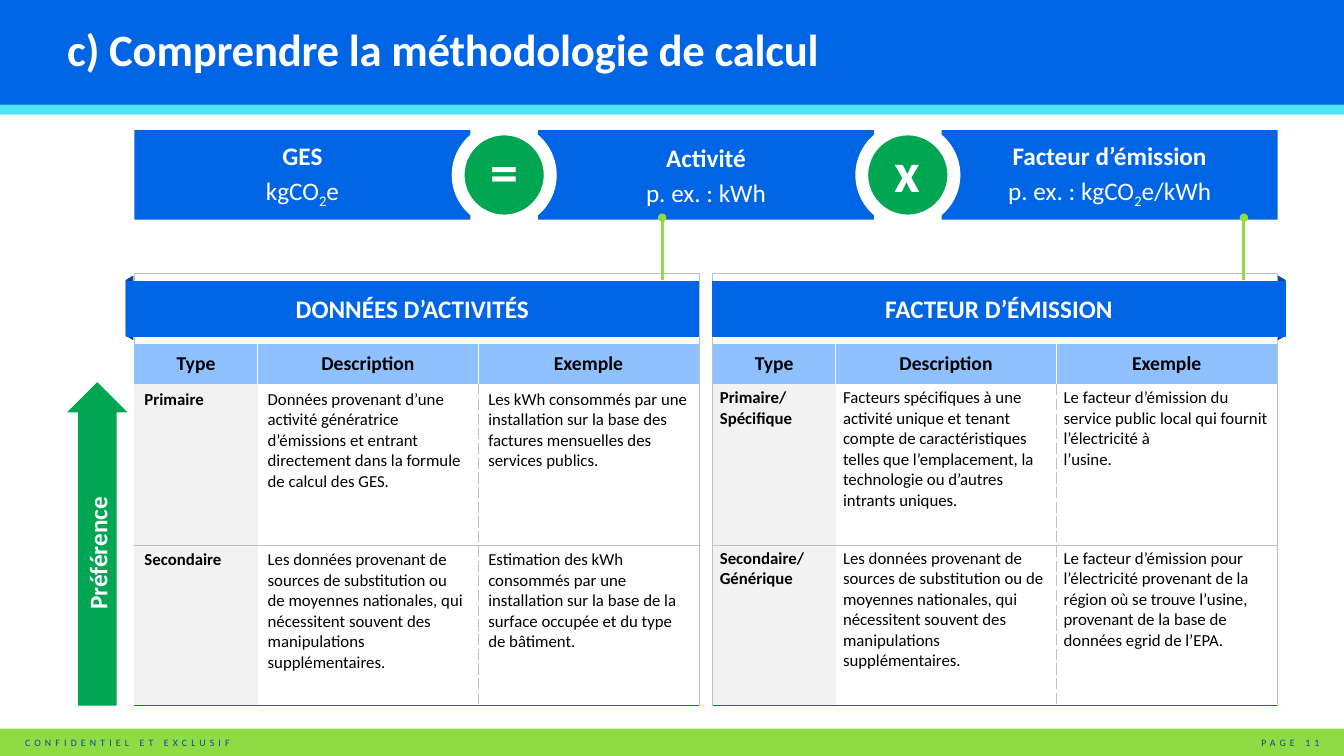
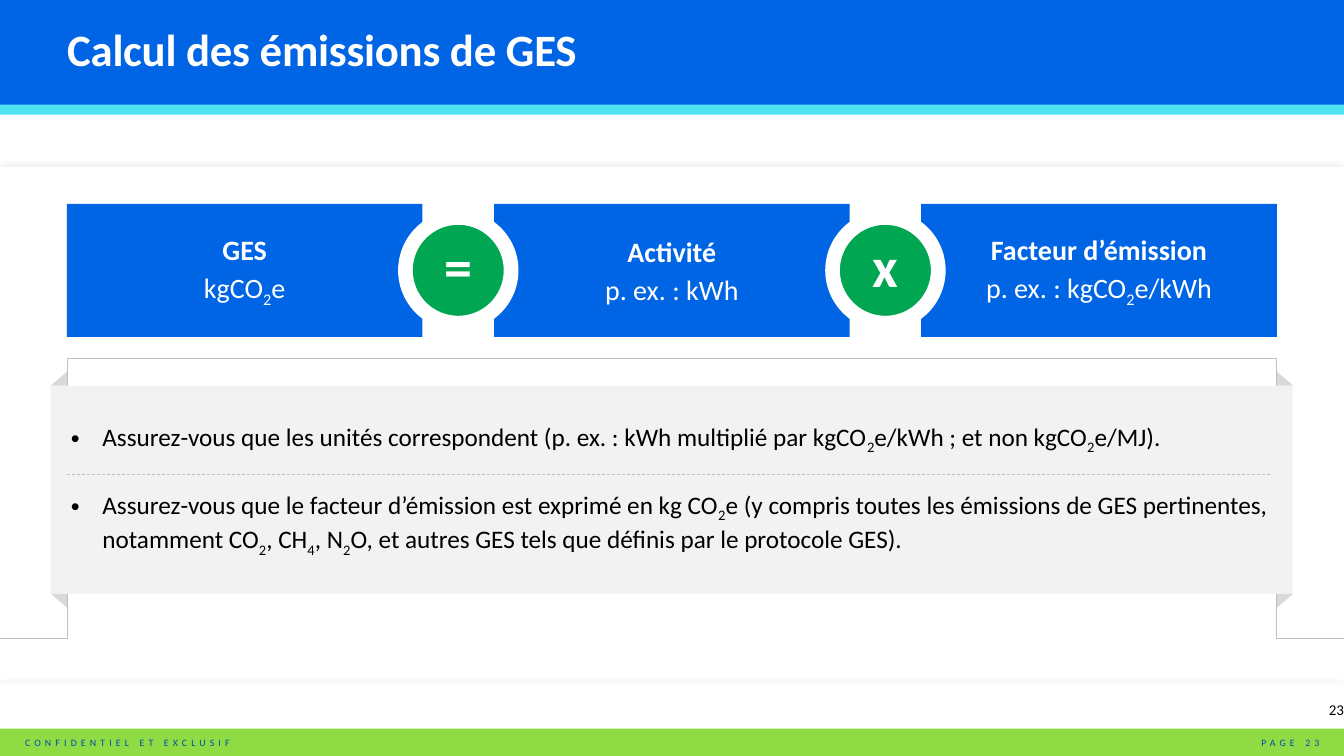
import pptx
import pptx.util
import pptx.dml.color
import pptx.enum.dml
import pptx.enum.shapes
import pptx.enum.text
import pptx.oxml
import pptx.oxml.ns
import lxml.etree

Pt = pptx.util.Pt
qn = pptx.oxml.ns.qn
sub = lxml.etree.SubElement
rgb = pptx.dml.color.RGBColor.from_string
KIND = pptx.enum.shapes.MSO_SHAPE
LINK = pptx.enum.shapes.MSO_CONNECTOR
ALIGN = pptx.enum.text.PP_ALIGN
ANCHOR = pptx.enum.text.MSO_ANCHOR
HUE = {
    "blue": "0065E5", "navy": "004CAC", "sky": "8FC0FF", "cyan": "4FE2F3",
    "lime": "8EDB43", "green": "00A651", "white": "FFFFFF", "black": "000000",
    "pale": "F2F2F2", "fold": "D9D9D9", "gray": "BFBFBF",
}


def form(shapes, kind, box, fill=None, line=None, thick=0.5):
    shape = shapes.add_shape(kind, *[Pt(n) for n in box])
    shape.shadow.inherit = False
    if fill:
        shape.fill.solid()
        shape.fill.fore_color.rgb = rgb(HUE[fill])
    else:
        shape.fill.background()
    if line:
        shape.line.color.rgb = rgb(HUE[line])
        shape.line.width = Pt(thick)
    else:
        shape.line.fill.background()
    return shape


def write(frame, lines, size, hue, bold=False, align=ALIGN.LEFT, track=0):
    frame.word_wrap = True
    for i, text in enumerate(lines):
        para = frame.add_paragraph() if i else frame.paragraphs[0]
        first, *rest = text.split("_")
        para.text = first
        for part in rest:
            low = para.add_run()
            low.text = part[0]
            low.font._element.set("baseline", "-25000")
            if part[1:]:
                para.add_run().text = part[1:]
        para.alignment = align
        for run in para.runs:
            run.font.name = "Calibri"
            run.font.size = Pt(size)
            run.font.bold = bold
            run.font.color.rgb = rgb(HUE[hue])
            if track:
                run.font._element.set("spc", str(track))
        for gap in para._p.findall(qn("a:br")):
            sub(gap, qn("a:rPr")).set("sz", str(size * 100))


deck = pptx.Presentation()
deck.slide_width, deck.slide_height = Pt(960), Pt(540)
master = deck.slide_master
head = master.placeholders[0]
head.left, head.top, head.width, head.height = Pt(48), Pt(13), Pt(862.5), Pt(49)

calc = deck.slides.add_slide(deck.slide_layouts[5])
units = deck.slides.add_slide(deck.slide_layouts[1])

bands = [
    form(calc.shapes, KIND.RECTANGLE, (0, 0, 960, 75), "blue"),
    form(calc.shapes, KIND.RECTANGLE, (0, 520.5, 960, 20.5), "lime"),
    form(calc.shapes, KIND.RECTANGLE, (0, 74.8, 960, 7.2), "cyan"),
]
note = calc.shapes.add_textbox(Pt(10.8), Pt(522.7), Pt(451), Pt(16))
write(note.text_frame, ["CONFIDENTIEL ET EXCLUSIF"], 7, "navy", track=300)
for i, band in enumerate(bands + [note]):
    master.shapes.element.insert(2 + i, band.element)

panel = form(units.shapes, KIND.RECTANGLE, (0, 119, 960, 366.5), "white")
glow = sub(panel.element.spPr.find(qn("a:effectLst")), qn("a:outerShdw"))
glow.set("blurRad", str(Pt(5)))
tint = sub(glow, qn("a:srgbClr"))
tint.set("val", HUE["gray"])
sub(tint, qn("a:alpha")).set("val", "40000")

terms = [
    ["GES", "kgCO_2e"],
    ["Activité", "p. ex. : kWh"],
    ["Facteur d’émission", "p. ex. : kgCO_2e/kWh"],
]
sheets = [
    (calc, "c) Comprendre la méthodologie de calcul", 11, 96, 93, 240, 64, 48.3, 18, 74, 57.6),
    (units, "Calcul des émissions de GES", 23, 47.8, 145.6, 254, 95, 51.1, 20, 85, 66),
]
for slide, name, page, left, top, wide, high, gap, size, ring, disc in sheets:
    frame = slide.shapes.title.text_frame
    write(frame, [name], 32, "white", True, track=-20)
    frame.auto_size = pptx.enum.text.MSO_AUTO_SIZE.NONE
    frame.vertical_anchor = ANCHOR.MIDDLE
    frame.margin_left = frame.margin_right = frame.margin_top = frame.margin_bottom = 0
    frame.paragraphs[0].line_spacing = 0.85
    foot = slide.shapes.add_textbox(Pt(871), Pt(522.7), Pt(78.5), Pt(16))
    write(foot.text_frame, [f"PAGE {page}"], 7, "navy", align=ALIGN.RIGHT, track=300)

    for i, term in enumerate(terms):
        box = (left + i * (wide + gap), top, wide, high)
        frame = form(slide.shapes, KIND.RECTANGLE, box, "blue").text_frame
        write(frame, term, size, "white", align=ALIGN.CENTER)
        frame.vertical_anchor = ANCHOR.MIDDLE
        frame.paragraphs[0].runs[0].font.bold = True
        for para in frame.paragraphs:
            para.space_after = Pt(3)
    for i, sign in enumerate("=x"):
        x = left + (i + 1) * (wide + gap) - gap / 2
        y = top + high / 2
        for span, fill in ((ring, "white"), (disc, "green")):
            box = (x - span / 2, y - span / 2, span, span)
            ball = form(slide.shapes, KIND.OVAL, box, fill, "white", 1)
        frame = ball.text_frame
        write(frame, [sign], 40, "white", True, ALIGN.CENTER)
        frame.vertical_anchor = ANCHOR.MIDDLE
        frame.margin_left = frame.margin_right = frame.margin_bottom = Pt(7.2)
        frame.margin_top = 0

arrow = form(calc.shapes, KIND.UP_ARROW, (48, 273, 43, 231), "green")
arrow.adjustments[0], arrow.adjustments[1] = 0.64, 0.5
write(arrow.text_frame, ["Préférence"], 18, "white", True, ALIGN.CENTER)
arrow.text_frame.vertical_anchor = ANCHOR.MIDDLE
arrow.text_frame._txBody.bodyPr.set("vert", "vert270")

proxy = "Les données provenant de sources de substitution ou de moyennes nationales, qui nécessitent souvent des manipulations supplémentaires."
labels = ["Type", "Description", "Exemple"]
grids = [
    (96, 90, 473, 69.8, 270, "DONNÉES D’ACTIVITÉS", 7.2, 3.6, [
        labels,
        ["Primaire",
         "Données provenant d’une activité génératrice d’émissions et entrant directement dans la formule de calcul des GES.",
         "Les kWh consommés par une installation sur la base des factures mensuelles des services publics."],
        ["Secondaire", proxy,
         "Estimation des kWh consommés par une installation sur la base de la surface occupée et du type de bâtiment."],
    ]),
    (509, 509, 888.5, 892.8, 90, "FACTEUR D’ÉMISSION", 5.2, 2.6, [
        labels,
        ["Primaire/\nSpécifique",
         "Facteurs spécifiques à une activité unique et tenant compte de caractéristiques telles que l’emplacement, la technologie ou d’autres intrants uniques.",
         "Le facteur d’émission du service public local qui fournit l’électricité à\nl’usine."],
        ["Secondaire/\nGénérique", proxy,
         "Le facteur d’émission pour l’électricité provenant de la région où se trouve l’usine, provenant de la base de données egrid de l’EPA."],
    ]),
]
for left, edge, stem, fold, turn, name, side, lid, rows in grids:
    form(calc.shapes, KIND.RECTANGLE, (left, 195, 403.5, 309), None, "gray")
    flap = form(calc.shapes, KIND.TRAPEZOID, (fold, 217.4, 45.4, 5), "navy", "navy")
    flap.adjustments[0] = 0.6
    flap.rotation = turn

    part = calc.shapes.add_table(3, 3, Pt(left), Pt(245.6), Pt(403.2), Pt(258.4))
    table = part.table
    table.first_row = table.horz_banding = False
    style = table._tbl.tblPr.find(qn("a:tableStyleId"))
    style.text = "{2D5ABB26-0587-4C30-8999-92F81FD0307C}"
    for i, wide in enumerate((88, 157.6, 157.6)):
        table.columns[i].width = Pt(wide)
    for i, high in enumerate((28.8, 114.8, 114.8)):
        table.rows[i].height = Pt(high)
    for r, row in enumerate(rows):
        for c, text in enumerate(row):
            cell = table.cell(r, c)
            cell.margin_left = cell.margin_right = Pt(side)
            cell.margin_top = cell.margin_bottom = Pt(lid)
            cell.vertical_anchor = ANCHOR.TOP if r else ANCHOR.MIDDLE
            write(cell.text_frame, [text], 12 if r else 14, "black",
                  r == 0 or c == 0, ALIGN.LEFT if r else ALIGN.CENTER)
            rule = ("gray", 0.5, "dash") if r else ("white", 0.5, "solid")
            edges = {}
            if c == 2 or (c == 1 and r == 0):
                edges["L"] = rule
            if c == 1:
                edges["R"] = rule
            if r == 2:
                edges["T"] = ("gray", 0.5, "solid")
            if r:
                edges["B"] = ("gray", 0.5, "solid") if r == 1 else ("blue", 1, "solid")
            props = cell._tc.get_or_add_tcPr()
            for key, (hue, thick, dash) in edges.items():
                line = sub(props, qn("a:ln" + key))
                line.set("w", str(Pt(thick)))
                sub(sub(line, qn("a:solidFill")), qn("a:srgbClr")).set("val", HUE[hue])
                sub(line, qn("a:prstDash")).set("val", dash)
            if r == 0 or c == 0:
                cell.fill.solid()
                cell.fill.fore_color.rgb = rgb(HUE["pale" if r else "sky"])
            else:
                cell.fill.background()

    link = calc.shapes.add_connector(LINK.STRAIGHT, Pt(stem), Pt(200), Pt(stem), Pt(155.5))
    link.line.color.rgb = rgb(HUE["lime"])
    link.line.width = Pt(2)
    sub(link.line._get_or_add_ln(), qn("a:tailEnd")).set("type", "oval")
    sub(link.element.spPr, qn("a:effectLst"))
    ribbon = form(calc.shapes, KIND.RECTANGLE, (edge, 201, 409, 39), "blue", "blue")
    write(ribbon.text_frame, [name], 18, "white", True, ALIGN.CENTER)
    ribbon.text_frame.vertical_anchor = ANCHOR.MIDDLE

count = units.shapes.add_textbox(Pt(913.5), Pt(500.5), Pt(46.5), Pt(12))
frame = count.text_frame
write(frame, ["23"], 10.7, "black", align=ALIGN.RIGHT)
frame.vertical_anchor = ANCHOR.MIDDLE
frame.margin_left = frame.margin_right = frame.margin_top = frame.margin_bottom = 0

traces = [
    [(47.8, 445), (47.8, 256.5), (912.2, 256.5), (912.2, 445)],
    [(0, 456.5), (47.8, 456.5), (47.8, 277)],
    [(960, 455.8), (912.2, 455.8), (912.2, 276.5)],
]
for start, *rest in traces:
    pen = units.shapes.build_freeform(*start, scale=12700)
    pen.add_line_segments(rest, close=False)
    trace = pen.convert_to_shape()
    trace.shadow.inherit = False
    trace.fill.background()
    trace.line.color.rgb = rgb(HUE["gray"])
    trace.line.width = Pt(0.5)

for x, flip in ((36.2, "1"), (912.2, "0")):
    for y, turn in ((265.5, "0"), (424, "1")):
        fold = form(units.shapes, KIND.ISOSCELES_TRIANGLE, (x, y, 11.6, 10), "fold")
        fold.adjustments[0] = 0
        frame = fold.element.spPr.find(qn("a:xfrm"))
        frame.set("flipH", flip)
        frame.set("flipV", turn)

body = units.placeholders[1]
units.shapes.element.append(body.element)
body.left, body.top, body.width, body.height = Pt(36.2), Pt(275.6), Pt(887.2), Pt(148.4)
body.fill.solid()
body.fill.fore_color.rgb = rgb(HUE["pale"])
frame = body.text_frame
write(frame, [
    "Assurez-vous que les unités correspondent (p. ex. : kWh multiplié par kgCO_2e/kWh ; et non kgCO_2e/MJ).",
    "Assurez-vous que le facteur d’émission est exprimé en kg CO_2e (y compris toutes les émissions de GES pertinentes, notamment CO_2, CH_4, N_2O, et autres GES tels que définis par le protocole GES).",
], 18, "black")
frame.auto_size = pptx.enum.text.MSO_AUTO_SIZE.NONE
frame.vertical_anchor = ANCHOR.MIDDLE
frame.margin_left = frame.margin_right = Pt(14.4)
frame.margin_top = frame.margin_bottom = Pt(7.2)
for i, para in enumerate(frame.paragraphs):
    para.space_before = Pt(12 * i)
    para.space_after = Pt(12)
    props = para._p.get_or_add_pPr()
    props.set("marL", str(Pt(22.5)))
    props.set("indent", str(Pt(-22.5)))
    sub(props, qn("a:buChar")).set("char", "•")

split = units.shapes.add_connector(LINK.STRAIGHT, Pt(47.8), Pt(339), Pt(907), Pt(339))
split.line.color.rgb = rgb(HUE["gray"])
split.line.width = Pt(0.5)
split.line.dash_style = pptx.enum.dml.MSO_LINE.DASH
sub(split.element.spPr, qn("a:effectLst"))

deck.save("out.pptx")
